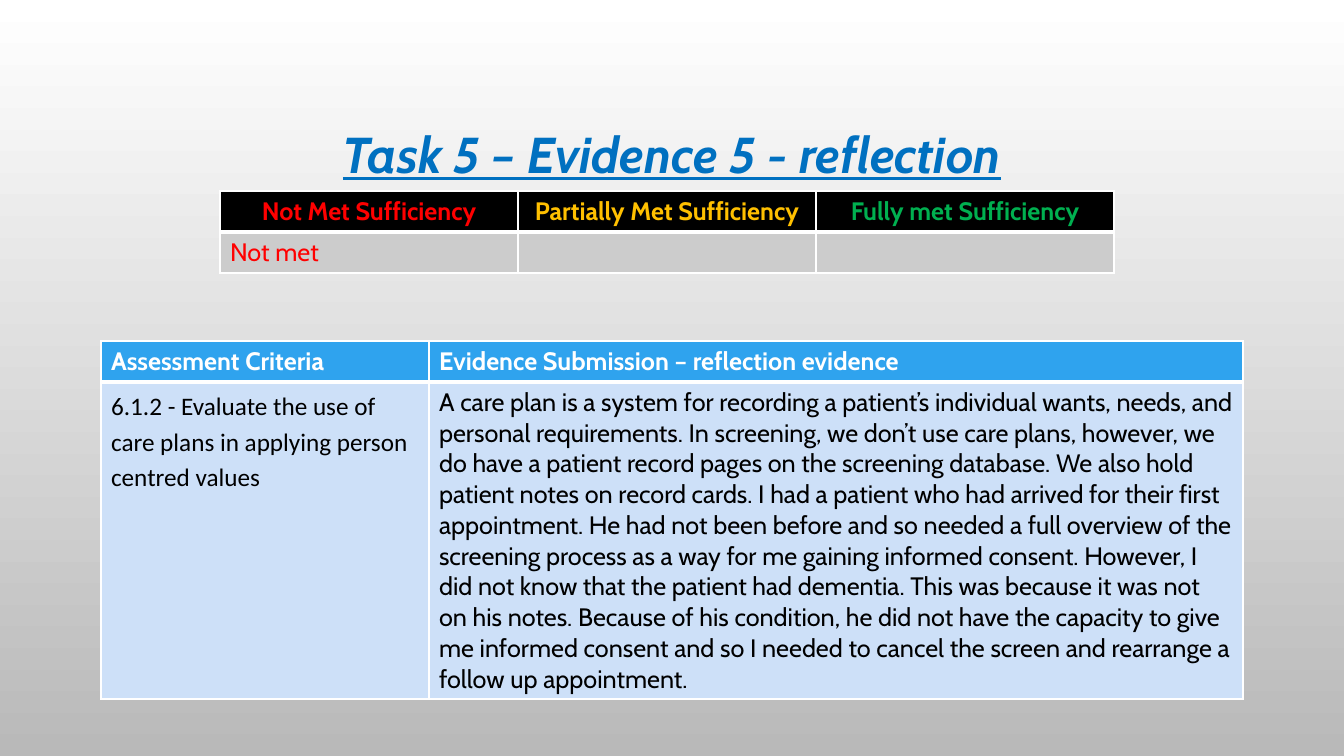
import lxml.etree
import pptx
import pptx.dml.color
import pptx.enum.text
import pptx.oxml.ns
import pptx.util

EMU_PER_PX = 914400 / 100.8
FONT = "Cabin"
ALIGN = pptx.enum.text.PP_ALIGN
WHITE, BLACK, RED = "FFFFFF", "000000", "FF0000"
THIN, THICK = 1, 3

REFLECTION = (
    "A care plan is a system for recording a patient’s individual wants, needs, and personal "
    "requirements. In screening, we don’t use care plans, however, we do have a patient record "
    "pages on the screening database. We also hold patient notes on record cards. I had a patient "
    "who had arrived for their first appointment. He had not been before and so needed a full "
    "overview of the screening process as a way for me gaining informed consent. However, I did "
    "not know that the patient had dementia. This was because it was not on his notes. Because of "
    "his condition, he did not have the capacity to give me informed consent and so I needed to "
    "cancel the screen and rearrange a follow up appointment."
)


def px(length):
    return pptx.util.Emu(round(length * EMU_PER_PX))


def rgb(color):
    return pptx.dml.color.RGBColor.from_string(color)


def set_text(text_frame, text, size, color, bold, align=ALIGN.LEFT, font=FONT):
    """Write one paragraph and return it with its formatted run."""
    text_frame.text = text
    paragraph = text_frame.paragraphs[0]
    paragraph.alignment = align
    run = paragraph.runs[0]
    run.font.name = font
    run.font.size = pptx.util.Pt(size)
    run.font.bold = bold
    run.font.color.rgb = rgb(color)
    return paragraph, run


def set_borders(cell, top, bottom):
    properties = cell._tc.get_or_add_tcPr()
    qn = pptx.oxml.ns.qn
    sides = (("a:lnL", THIN), ("a:lnR", THIN), ("a:lnT", top), ("a:lnB", bottom))
    for position, (tag, width) in enumerate(sides):
        line = lxml.etree.Element(qn(tag), w=str(pptx.util.Pt(width)))
        fill = lxml.etree.SubElement(line, qn("a:solidFill"))
        lxml.etree.SubElement(fill, qn("a:srgbClr"), val=WHITE)
        properties.insert(position, line)


def add_background(slide):
    fill = slide.background.fill
    fill.gradient()
    fill.gradient_angle = 270
    for stop, color in zip(fill.gradient_stops, (WHITE, "B9B9B9")):
        stop.color.rgb = rgb(color)


def add_title(slide, text):
    box = slide.shapes.add_textbox(px(101), px(69), px(1142), px(176))
    text_frame = box.text_frame
    text_frame.word_wrap = True
    text_frame.vertical_anchor = pptx.enum.text.MSO_ANCHOR.MIDDLE
    paragraph, run = set_text(text_frame, text, 36, "0070C0", True, ALIGN.CENTER)
    paragraph.line_spacing = 0.9
    run.font.italic = True
    run.font.underline = True


def add_table(slide, left, top, widths, heights, fills, headers, align):
    """Add a header row and an empty body row; headers are (text, color) pairs."""
    frame = slide.shapes.add_table(
        len(heights), len(widths), px(left), px(top), px(sum(widths)), px(sum(heights))
    )
    table = frame.table
    table.horz_banding = False
    for column, width in zip(table.columns, widths):
        column.width = px(width)
    borders = ((THIN, THICK), (THICK, THIN))
    for row, height, fill, (upper, lower) in zip(table.rows, heights, fills, borders):
        row.height = px(height)
        for cell in row.cells:
            cell.fill.solid()
            cell.fill.fore_color.rgb = rgb(fill)
            set_borders(cell, upper, lower)
    for cell, (text, color) in zip(table.rows[0].cells, headers):
        set_text(cell.text_frame, text, 18, color, True, align)
    return table


def main():
    presentation = pptx.Presentation()
    presentation.slide_width = px(1344)
    presentation.slide_height = px(756)
    slide = presentation.slides.add_slide(presentation.slide_layouts[6])

    add_background(slide)
    add_title(slide, "Task 5 – Evidence 5 - reflection")

    # Sufficiency rating
    rating = add_table(
        slide, 220, 191, [298] * 3, [41, 41], (BLACK, "CCCCCC"),
        (
            ("Not Met Sufficiency", RED),
            ("Partially Met Sufficiency", "FFC000"),
            ("Fully met Sufficiency", "00B050"),
        ),
        ALIGN.CENTER,
    )
    set_text(rating.cell(1, 0).text_frame, "Not met", 18, RED, False)

    # Criteria and submitted evidence
    evidence = add_table(
        slide, 101, 341, [328, 814], [41, 317], ("2FA3EE", "CDE0F8"),
        (
            ("Assessment Criteria", WHITE),
            ("Evidence Submission – reflection evidence", WHITE),
        ),
        ALIGN.LEFT,
    )
    criterion, _ = set_text(
        evidence.cell(1, 0).text_frame,
        "6.1.2 - Evaluate the use of care plans in applying person centred values",
        18, BLACK, False, font="Calibri",
    )
    criterion.line_spacing = 1.15
    criterion.space_after = pptx.util.Pt(10)
    set_text(evidence.cell(1, 1).text_frame, REFLECTION, 18, BLACK, False)

    presentation.save("out.pptx")


if __name__ == "__main__":
    main()
